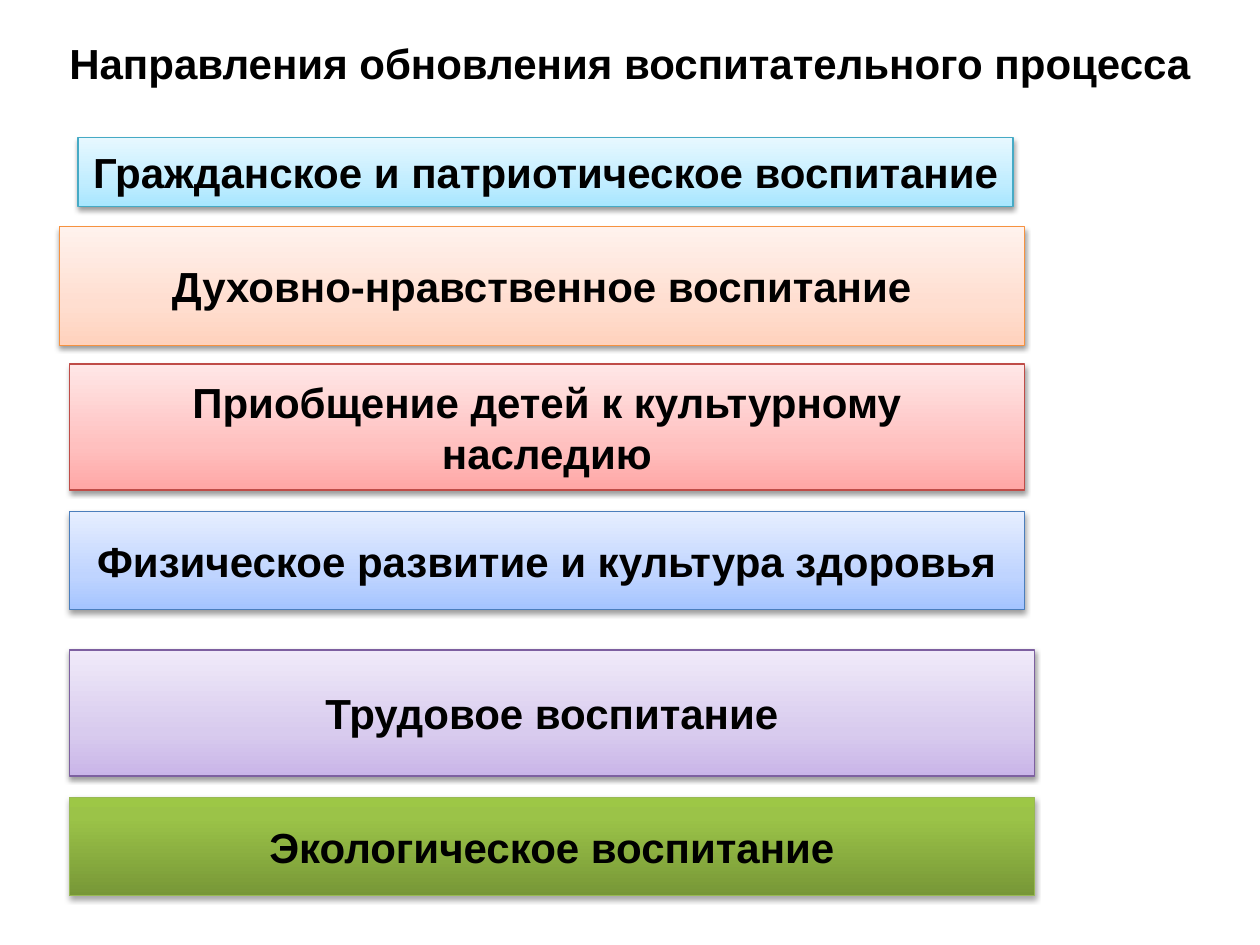
from lxml import etree
from pptx import Presentation, util as u
from pptx.dml.color import RGBColor
from pptx.enum import shapes, text
from pptx.oxml.ns import qn

FONT = {"name": "Arial", "size": u.Pt(24), "bold": True}
SHADE = {"blurRad": u.Pt(3.1), "dist": u.Pt(1.6), "dir": 5400000, "rotWithShape": 0}


def color(code):
    return RGBColor.from_string(code)


def node(parent, tag, **attrs):
    values = {key: str(val) for key, val in attrs.items()}
    return etree.SubElement(parent, qn(tag), values)


class Deck:
    def __init__(self):
        self.prs = Presentation()
        self.prs.slide_width, self.prs.slide_height = u.Inches(10), u.Inches(7.5)
        self.slide = self.prs.slides.add_slide(self.prs.slide_layouts[6])

    def label(self, shape, words):
        frame = shape.text_frame
        frame.word_wrap = True
        frame.vertical_anchor = text.MSO_ANCHOR.MIDDLE
        para = frame.paragraphs[0]
        para.alignment = text.PP_ALIGN.CENTER
        run = para.add_run()
        run.text = words
        for key, val in FONT.items():
            setattr(run.font, key, val)
        run.font.color.rgb = color("000000")
        return frame

    def title(self, words, *box):
        shape = self.slide.shapes.add_textbox(*map(u.Inches, box))
        frame = self.label(shape, words)
        for side in ("left", "top", "right", "bottom"):
            setattr(frame, "margin_" + side, 0)

    def bar(self, words, box, stops, edge, shade=38):
        shape = self.slide.shapes.add_shape(
            shapes.MSO_SHAPE.RECTANGLE, *map(u.Inches, box))
        self.blend(shape, stops)
        shape.line.color.rgb = color(edge)
        shape.line.width = u.Pt(0.75)
        self.shadow(shape, shade)
        self.label(shape, words)

    def blend(self, shape, stops):
        shape.fill.gradient()
        shape.fill.gradient_angle = 90
        row = shape._element.spPr.find(".//" + qn("a:gsLst"))
        for old in list(row):
            row.remove(old)
        for place, code in stops:
            stop = node(row, "a:gs", pos=place * 1000)
            node(stop, "a:srgbClr", val=code)

    def shadow(self, shape, shade):
        shape.shadow.inherit = False
        effects = shape._element.spPr.find(qn("a:effectLst"))
        outer = node(effects, "a:outerShdw", **SHADE)
        black = node(outer, "a:srgbClr", val="000000")
        node(black, "a:alpha", val=shade * 1000)


def soft(*codes):
    return list(zip((0, 35, 100), codes))


def main():
    deck = Deck()

    # Heading
    deck.title("Направления обновления воспитательного процесса", 0.5, 0.3, 9, 0.4)

    # Directions, from top to bottom
    bars = [
        ("Гражданское и патриотическое воспитание", (0.62, 1.09, 7.42, 0.55),
         soft("A7E6FF", "C1EDFF", "E7F8FF"), "46AAC5"),
        ("Духовно-нравственное воспитание", (0.47, 1.8, 7.66, 0.94),
         soft("FFD2BD", "FFDED0", "FFF2ED"), "F69240"),
        ("Приобщение детей к культурному наследию", (0.55, 2.89, 7.58, 1),
         soft("FFA6A5", "FFC0BF", "FFE7E7"), "BF4C48"),
        ("Физическое развитие и культура здоровья", (0.55, 4.06, 7.58, 0.78),
         soft("A4C4FF", "BFD4FF", "E6EEFF"), "4B7EBC"),
        ("Трудовое воспитание", (0.55, 5.16, 7.66, 1),
         soft("C9B5E8", "D8CBEE", "F0EAF9"), "7D60A0"),
        ("Экологическое воспитание", (0.55, 6.33, 7.66, 0.78),
         [(0, "779737"), (80, "9BC348"), (100, "9DC746")], "98B955", 35),
    ]
    for item in bars:
        deck.bar(*item)

    deck.prs.save("out.pptx")


if __name__ == "__main__":
    main()
